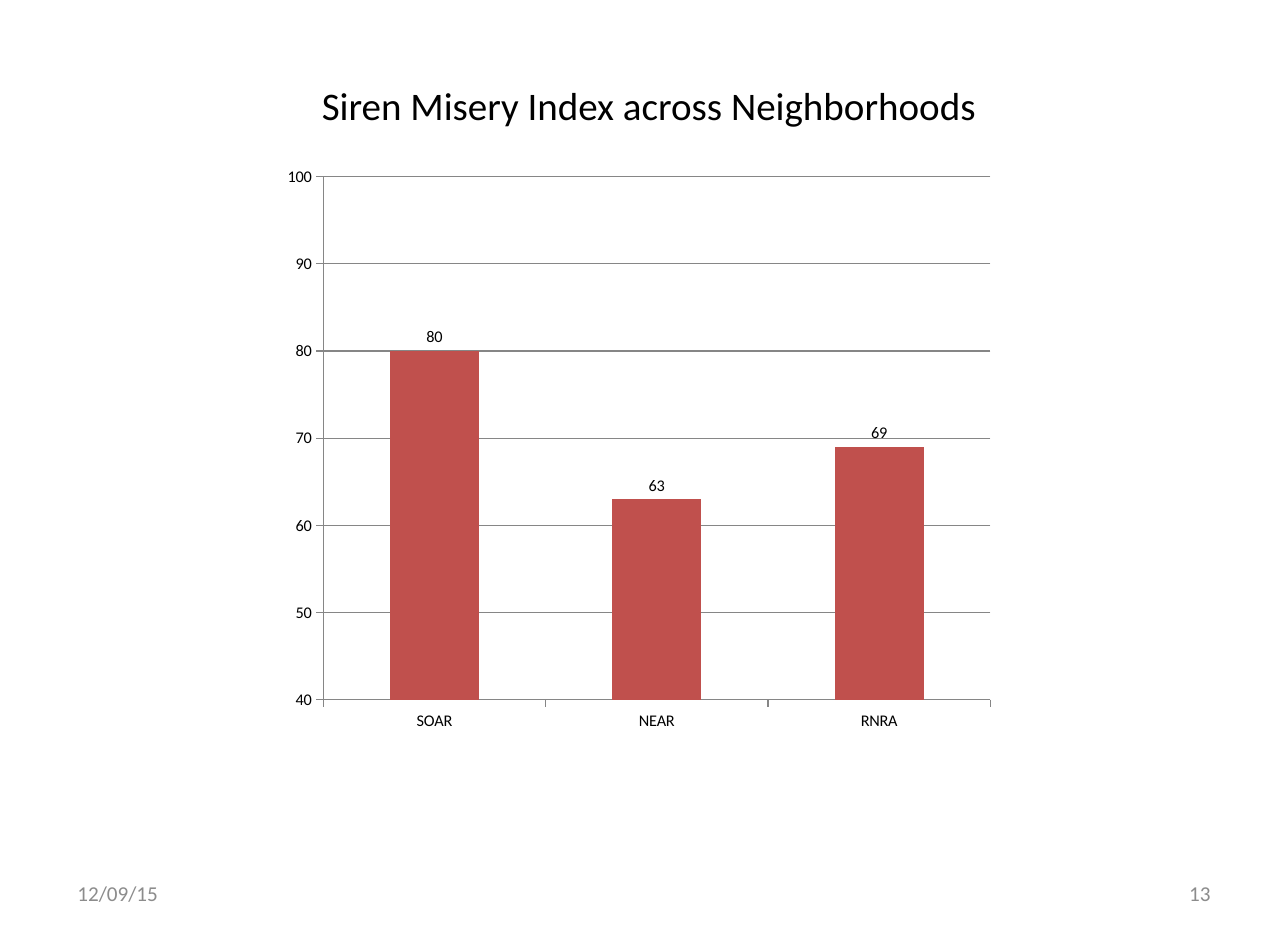
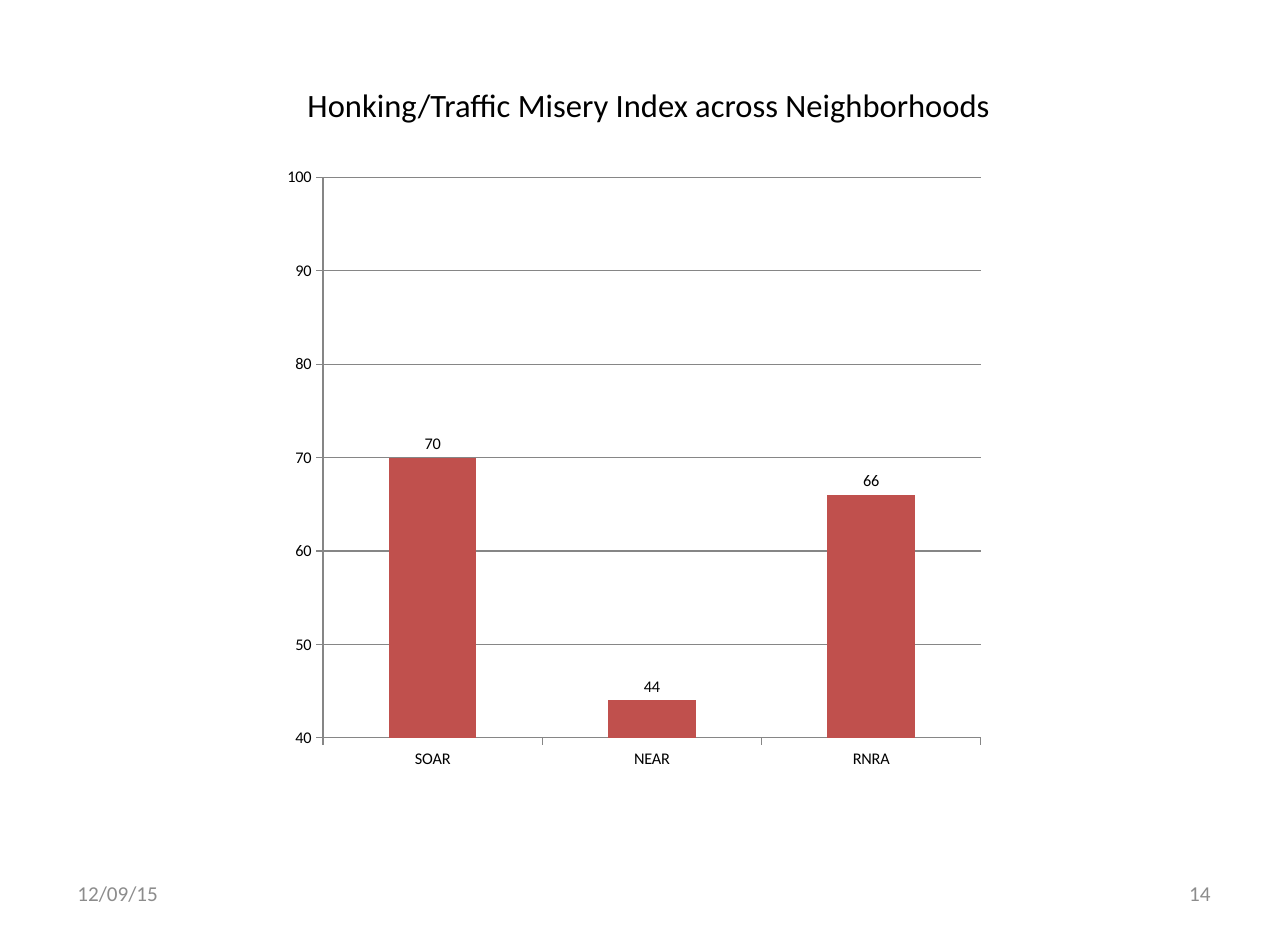
from dataclasses import dataclass

from pptx import Presentation
from pptx.chart.data import CategoryChartData
from pptx.dml.color import RGBColor
from pptx.enum.chart import XL_CHART_TYPE, XL_LABEL_POSITION, XL_TICK_MARK
from pptx.enum.text import MSO_ANCHOR, PP_ALIGN
from pptx.util import Cm, Pt

NEIGHBORHOODS = ("SOAR", "NEAR", "RNRA")
DATE = "12/09/15"
SLIDES = [
    {"title": "Siren Misery Index across Neighborhoods", "title_size": Pt(24),
     "number": 13, "values": (80, 63, 69), "chart_size": (Cm(15.88), Cm(12.7))},
    {"title": "Honking/Traffic Misery Index across Neighborhoods", "title_size": Pt(20),
     "number": 14, "values": (70, 44, 66), "chart_size": (Cm(15.67), Cm(13.54))},
]


@dataclass(frozen=True)
class Theme:
    font: str = "Calibri"
    text: RGBColor = RGBColor(0x00, 0x00, 0x00)
    footer: RGBColor = RGBColor(0x8C, 0x8C, 0x8C)
    bar: RGBColor = RGBColor(0xC0, 0x50, 0x4D)
    line: RGBColor = RGBColor(0x86, 0x86, 0x86)
    footer_size: Pt = Pt(13)
    chart_size: Pt = Pt(10)
    line_width: Pt = Pt(0.75)


THEME = Theme()
SLIDE_W, SLIDE_H = Cm(27.94), Cm(20.32)
TITLE_BOX = Cm(4.65), Cm(1.35), Cm(18.85), Cm(1.83)
CHART_LEFT, CHART_TOP = Cm(5.92), Cm(3.38)
FOOTER_MARGIN, FOOTER_TOP = Cm(1.4), Cm(18.82)
FOOTER_W, FOOTER_H = Cm(6.53), Cm(1.09)


def style_font(font, size, color):
    font.name, font.size = THEME.font, size
    font.color.rgb = color


def write(sp, text, size, color, align):
    tf = sp.text_frame
    tf.word_wrap = True
    tf.vertical_anchor = MSO_ANCHOR.MIDDLE
    tf.margin_left = tf.margin_right = Cm(0.28)
    tf.margin_top = tf.margin_bottom = Cm(0.13)
    p = tf.paragraphs[0]
    p.alignment = align
    r = p.add_run()
    r.text = text
    style_font(r.font, size, color)


def add_title(s, text, size):
    sp = s.shapes.title
    sp.left, sp.top, sp.width, sp.height = TITLE_BOX
    write(sp, text, size, THEME.text, PP_ALIGN.CENTER)


def add_footers(s, number):
    right = SLIDE_W - FOOTER_MARGIN - FOOTER_W
    for left, text, align in ((FOOTER_MARGIN, DATE, PP_ALIGN.LEFT),
                              (right, str(number), PP_ALIGN.RIGHT)):
        sp = s.shapes.add_textbox(left, FOOTER_TOP, FOOTER_W, FOOTER_H)
        write(sp, text, THEME.footer_size, THEME.footer, align)


def style_line(line):
    line.color.rgb = THEME.line
    line.width = THEME.line_width


def add_index_chart(s, values, size):
    data = CategoryChartData()
    data.categories = NEIGHBORHOODS
    data.add_series("Series 1", values)
    chart = s.shapes.add_chart(XL_CHART_TYPE.COLUMN_CLUSTERED,
                               CHART_LEFT, CHART_TOP, *size, data).chart
    chart.has_title = chart.has_legend = False
    style_font(chart.font, THEME.chart_size, THEME.text)

    for axis in (chart.category_axis, chart.value_axis):
        axis.major_tick_mark = XL_TICK_MARK.OUTSIDE
        axis.minor_tick_mark = XL_TICK_MARK.NONE
        style_line(axis.format.line)
    axis = chart.value_axis
    axis.minimum_scale, axis.maximum_scale, axis.major_unit = 40, 100, 10
    axis.has_major_gridlines = True
    style_line(axis.major_gridlines.format.line)

    plot = chart.plots[0]
    plot.gap_width = 150
    plot.vary_by_categories = False
    fill = plot.series[0].format.fill
    fill.solid()
    fill.fore_color.rgb = THEME.bar
    plot.has_data_labels = True
    labels = plot.data_labels
    labels.show_value = True
    labels.position = XL_LABEL_POSITION.OUTSIDE_END
    style_font(labels.font, THEME.chart_size, THEME.text)


def main():
    prs = Presentation()
    prs.slide_width, prs.slide_height = SLIDE_W, SLIDE_H
    title_only = prs.slide_layouts[5]
    for content in SLIDES:
        s = prs.slides.add_slide(title_only)
        add_title(s, content["title"], content["title_size"])
        add_footers(s, content["number"])
        add_index_chart(s, content["values"], content["chart_size"])
    prs.save("out.pptx")


if __name__ == "__main__":
    main()
